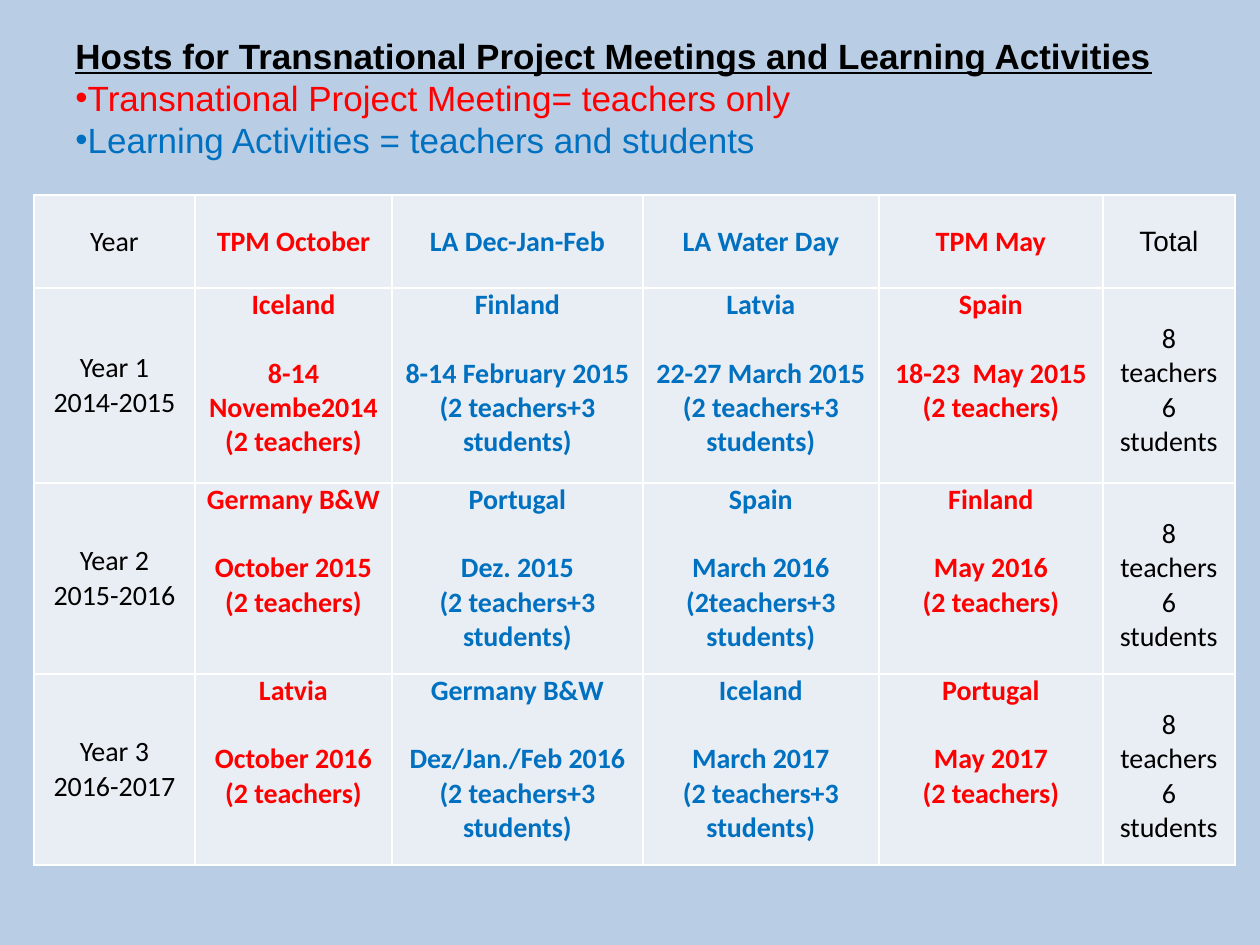
from lxml.etree import SubElement
from pptx import Presentation
from pptx.dml.color import RGBColor as RGB
from pptx.enum.text import MSO_ANCHOR as ANCHOR, PP_ALIGN as ALIGN
from pptx.oxml.ns import qn
from pptx.util import Emu, Pt

THEME = {
    "background": "B9CDE5", "cell": "E9EDF4", "border": "FFFFFF",
    "plain": "000000", "meeting": "FF0000", "activity": "0070C0",
    "heading_font": "Arial", "table_font": "Calibri",
    "heading_size": 20, "table_size": 16, "heading_line": 24,
    "country_gap": 19.5, "border_width": 1,
}

HEADING = [
    ("Hosts for Transnational Project Meetings and Learning Activities", "plain"),
    ("Transnational Project Meeting= teachers only", "meeting"),
    ("Learning Activities = teachers and students", "activity"),
]

COLUMNS = [
    ("Year", 161, "plain"),
    ("TPM October", 197, "meeting"),
    ("LA Dec-Jan-Feb", 251, "activity"),
    ("LA Water Day", 236, "activity"),
    ("TPM May", 224, "meeting"),
    ("Total", 132, "plain"),
]

TEACHERS = "(2 teachers)"
GROUP = "(2 teachers+3 students)"
TOTAL = ["8 teachers", "6 students"]

YEARS = [
    [["Year 1", "2014-2015"],
     ["Iceland", "8-14 Novembe2014", TEACHERS],
     ["Finland", "8-14 February 2015", GROUP],
     ["Latvia", "22-27 March 2015", GROUP],
     ["Spain", "18-23  May 2015", TEACHERS],
     TOTAL],
    [["Year 2", "2015-2016"],
     ["Germany B&W", "October 2015", TEACHERS],
     ["Portugal", "Dez. 2015", GROUP],
     ["Spain", "March 2016", "(2teachers+3 students)"],
     ["Finland", "May 2016", TEACHERS],
     TOTAL],
    [["Year 3", "2016-2017"],
     ["Latvia", "October 2016", TEACHERS],
     ["Germany B&W", "Dez/Jan./Feb 2016", GROUP],
     ["Iceland", "March 2017", GROUP],
     ["Portugal", "May 2017", TEACHERS],
     TOTAL],
]

ROW_HEIGHTS = [93, 195, 191, 191]
TABLE_LEFT, TABLE_TOP = 34, 195
HEADING_BOX = (63, 28, 1153, 178)
CELL_INSET, TOTAL_INSET = 9, 34


def px(value):
    return Emu(round(value * 914400 / 126))


def style(font, color, **values):
    for name, value in values.items():
        setattr(font, name, value)
    font.color.rgb = RGB.from_string(THEME[color])


def paragraphs(frame, count):
    for _ in range(count - 1):
        frame.add_paragraph()
    return frame.paragraphs


def add_heading(slide):
    frame = slide.shapes.add_textbox(*map(px, HEADING_BOX)).text_frame
    frame.word_wrap = True
    for paragraph, (text, color) in zip(paragraphs(frame, len(HEADING)), HEADING):
        first = color == "plain"
        paragraph.line_spacing = Pt(THEME["heading_line"])
        if not first:
            properties = paragraph._p.get_or_add_pPr()
            SubElement(properties, qn("a:buFont"), typeface=THEME["heading_font"])
            SubElement(properties, qn("a:buChar"), char="•")
        run = paragraph.add_run()
        run.text = text
        style(run.font, color, name=THEME["heading_font"],
              size=Pt(THEME["heading_size"]), bold=first, underline=first)


def add_borders(cell):
    properties = cell._tc.get_or_add_tcPr()
    for side in ("lnL", "lnR", "lnT", "lnB"):
        line = SubElement(properties, qn(f"a:{side}"), w=str(Pt(THEME["border_width"])))
        fill = SubElement(line, qn("a:solidFill"))
        SubElement(fill, qn("a:srgbClr"), val=THEME["border"])


def fill_cell(cell, lines, color, is_header, is_year, is_total):
    add_borders(cell)
    cell.fill.solid()
    cell.fill.fore_color.rgb = RGB.from_string(THEME["cell"])
    middle = is_header or is_year
    layout = {
        "margin_left": px(CELL_INSET),
        "margin_right": px(CELL_INSET),
        "margin_top": px(TOTAL_INSET if is_total and not is_header else 0),
        "margin_bottom": 0,
        "vertical_anchor": ANCHOR.MIDDLE if middle else ANCHOR.TOP,
    }
    for name, value in layout.items():
        setattr(cell, name, value)
    font_name = THEME["heading_font" if is_header and is_total else "table_font"]
    for index, paragraph in enumerate(paragraphs(cell.text_frame, len(lines))):
        paragraph.alignment = ALIGN.CENTER
        if index == 0 and not middle and not is_total:
            paragraph.space_after = Pt(THEME["country_gap"])
        run = paragraph.add_run()
        run.text = lines[index]
        style(run.font, color, name=font_name, size=Pt(THEME["table_size"]),
              bold=color != "plain")


def add_schedule(slide):
    rows = [[[name] for name, _, _ in COLUMNS]] + YEARS
    width = sum(column[1] for column in COLUMNS)
    box = (TABLE_LEFT, TABLE_TOP, width, sum(ROW_HEIGHTS))
    table = slide.shapes.add_table(len(rows), len(COLUMNS), *map(px, box)).table
    table.first_row = table.horz_banding = False
    for column, (_, column_width, _) in zip(table.columns, COLUMNS):
        column.width = px(column_width)
    for row, height in zip(table.rows, ROW_HEIGHTS):
        row.height = px(height)
    last = len(COLUMNS) - 1
    for r, row in enumerate(rows):
        for c, lines in enumerate(row):
            fill_cell(table.cell(r, c), lines, COLUMNS[c][2], r == 0, c == 0, c == last)


def main():
    presentation = Presentation()
    presentation.slide_width, presentation.slide_height = px(1260), px(945)
    slide = presentation.slides.add_slide(presentation.slide_layouts[6])
    slide.background.fill.solid()
    slide.background.fill.fore_color.rgb = RGB.from_string(THEME["background"])
    add_schedule(slide)
    add_heading(slide)
    presentation.save("out.pptx")


if __name__ == "__main__":
    main()
